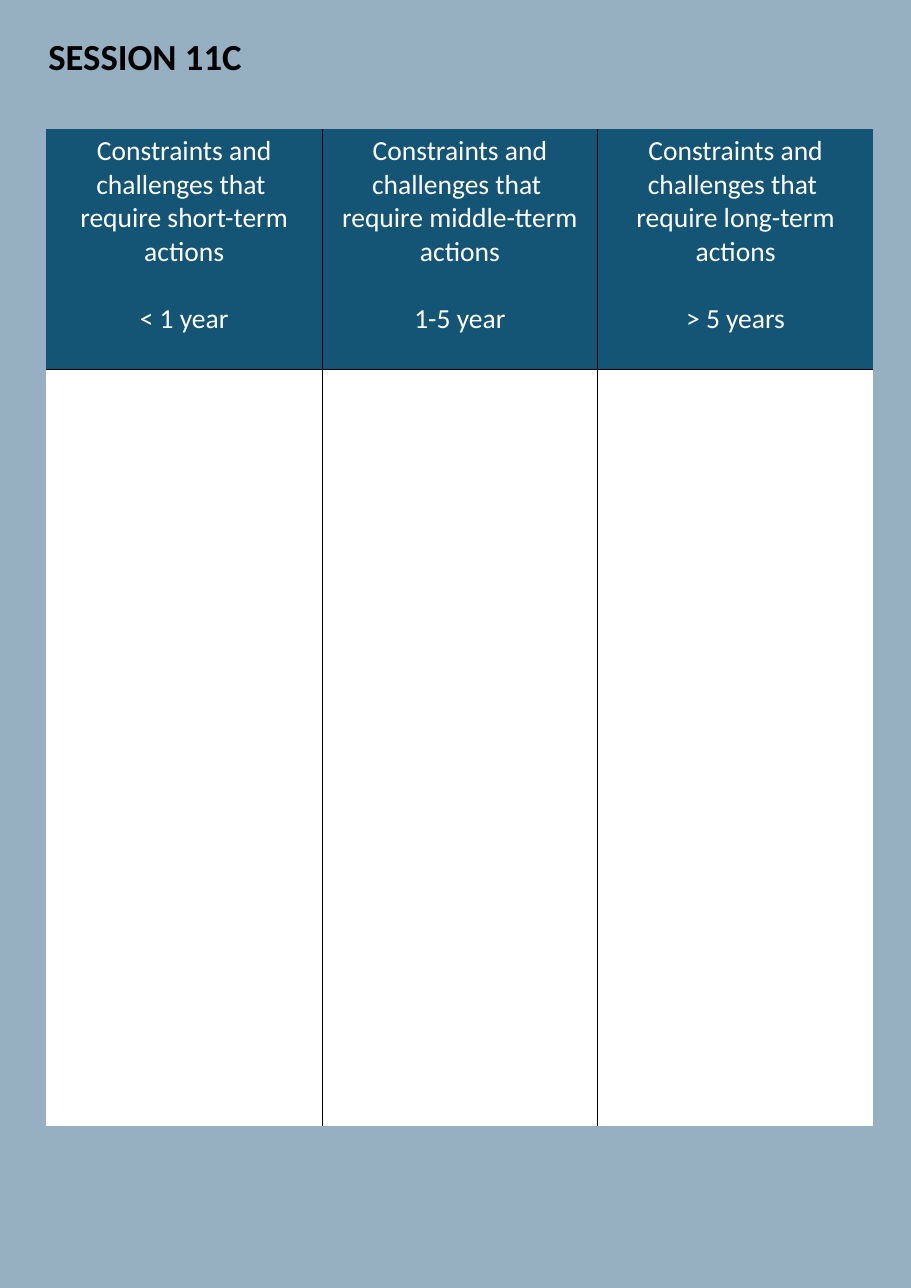
"""Build the Session 11C worksheet with three time horizons."""
import pptx
import pptx.dml.color
import pptx.enum.text
import pptx.oxml.ns
import pptx.util
import lxml.etree

Inches = pptx.util.Inches


def color(value):
    return pptx.dml.color.RGBColor.from_string(value)


def write(paragraph, text, size=18, ink="FFFFFF", bold=False, align=None, before=0):
    paragraph.alignment = align
    paragraph.space_before = pptx.util.Pt(before)
    run = paragraph.add_run()
    run.text = text
    run.font.name = "Calibri"
    run.font.size = pptx.util.Pt(size)
    run.font.bold = bold
    run.font.color.rgb = color(ink)


presentation = pptx.Presentation()
presentation.slide_width = Inches(8.27)
presentation.slide_height = Inches(11.69)
slide = presentation.slides.add_slide(presentation.slide_layouts[6])
slide.background.fill.solid()
slide.background.fill.fore_color.rgb = color("96B0C1")

title = slide.shapes.add_textbox(Inches(0.34), Inches(0.26), Inches(7.58), Inches(0.5))
title.text_frame.word_wrap = True
write(title.text_frame.paragraphs[0], "SESSION 11C", size=24, ink="000000", bold=True)

horizons = [("short-term", "< 1 year"), ("middle-tterm", "1-5 year"), ("long-term", "> 5 years")]
row_heights = [2.18, 6.87]
row_fills = ["145576", "FFFFFF"]
last_row, last_column = len(row_heights) - 1, len(horizons) - 1

table = slide.shapes.add_table(
    len(row_heights), len(horizons), Inches(0.42), Inches(1.17), Inches(7.51), Inches(9.05)
).table
for row, height in zip(table.rows, row_heights):
    row.height = Inches(height)

for column_index, (term, period) in enumerate(horizons):
    lines = [
        ("Constraints and challenges that ", 0),
        (f"require {term} actions", 0),
        (period, 22),
    ]
    text_frame = table.cell(0, column_index).text_frame
    for line_index, (text, gap) in enumerate(lines):
        paragraph = text_frame.add_paragraph() if line_index else text_frame.paragraphs[0]
        write(paragraph, text, align=pptx.enum.text.PP_ALIGN.CENTER, before=gap)

    for row_index, fill in enumerate(row_fills):
        cell = table.cell(row_index, column_index)
        properties = cell._tc.get_or_add_tcPr()
        inner_sides = {
            "lnL": column_index > 0,
            "lnR": column_index < last_column,
            "lnT": row_index > 0,
            "lnB": row_index < last_row,
        }
        for side, is_inner in inner_sides.items():
            border = lxml.etree.SubElement(properties, pptx.oxml.ns.qn(f"a:{side}"), w="6350")
            if is_inner:
                solid = lxml.etree.SubElement(border, pptx.oxml.ns.qn("a:solidFill"))
                lxml.etree.SubElement(solid, pptx.oxml.ns.qn("a:srgbClr"), val="000000")
            else:
                lxml.etree.SubElement(border, pptx.oxml.ns.qn("a:noFill"))
        cell.fill.solid()
        cell.fill.fore_color.rgb = color(fill)

presentation.save("out.pptx")
